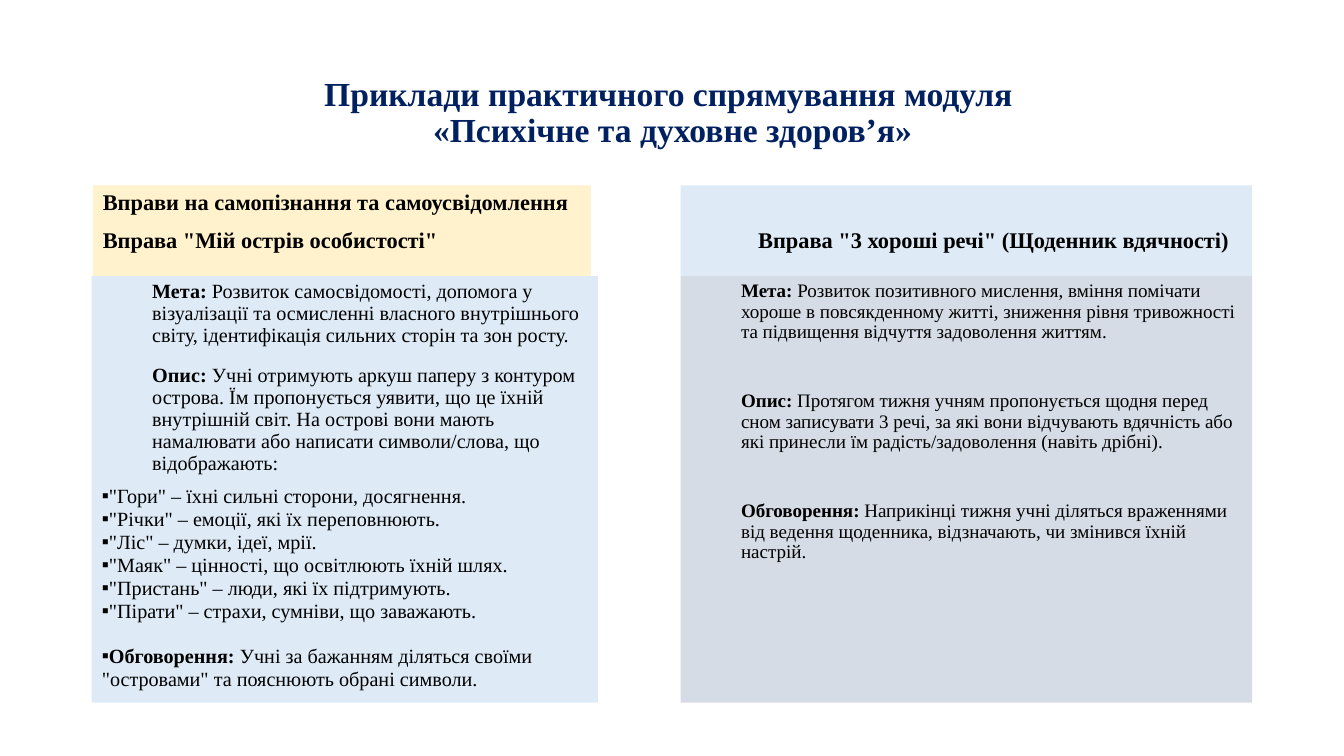
from lxml.etree import SubElement
from pptx import Presentation
from pptx.dml.color import RGBColor
from pptx.enum.text import MSO_ANCHOR, MSO_AUTO_SIZE, PP_ALIGN
from pptx.oxml.ns import qn
from pptx.util import Emu, Pt

EMU_PER_PX = 9144  # 100 px to the inch
FONT = "Times New Roman"
NAVY = RGBColor(0x00, 0x20, 0x60)
BLACK = RGBColor(0x00, 0x00, 0x00)
CREAM = RGBColor(0xFF, 0xF2, 0xCC)
PALE_BLUE = RGBColor(0xDE, 0xEB, 0xF7)
GREY_BLUE = RGBColor(0xD6, 0xDC, 0xE5)

HEAD_TOP, HEAD_HEIGHT = 184, 90
BODY_TOP, BODY_HEIGHT = 274, 423
RIGHT_LEFT, RIGHT_WIDTH = 675, 567

ISLAND_GOALS = [
    ("Мета:", " Розвиток самосвідомості, допомога у візуалізації та осмисленні власного "
     "внутрішнього світу, ідентифікація сильних сторін та зон росту."),
    ("Опис:", " Учні отримують аркуш паперу з контуром острова. Їм пропонується уявити, що це "
     "їхній внутрішній світ. На острові вони мають намалювати або написати символи/слова, "
     "що відображають:"),
]
ISLAND_SYMBOLS = [
    "\"Гори\" – їхні сильні сторони, досягнення.",
    "\"Річки\" – емоції, які їх переповнюють.",
    "\"Ліс\" – думки, ідеї, мрії.",
    "\"Маяк\" – цінності, що освітлюють їхній шлях.",
    "\"Пристань\" – люди, які їх підтримують.",
    "\"Пірати\" – страхи, сумніви, що заважають.",
]
ISLAND_TALK = ("Обговорення:", " Учні за бажанням діляться своїми \"островами\" та пояснюють "
               "обрані символи.")
GRATITUDE = [
    ("Мета:", " Розвиток позитивного мислення, вміння помічати хороше в повсякденному житті, "
     "зниження рівня тривожності та підвищення відчуття задоволення життям."),
    ("Опис:", " Протягом тижня учням пропонується щодня перед сном записувати 3 речі, за які "
     "вони відчувають вдячність або які принесли їм радість/задоволення (навіть дрібні)."),
    ("Обговорення:", " Наприкінці тижня учні діляться враженнями від ведення щоденника, "
     "відзначають, чи змінився їхній настрій."),
]


def px(length):
    return Emu(length * EMU_PER_PX)


class ModulePage:
    def __init__(self, deck):
        self.page = deck.slides.add_slide(deck.slide_layouts.get_by_name("Comparison"))
        (self.title_holder, self.left_head, self.left_body,
         self.right_head, self.right_body) = self.page.placeholders

    def place(self, box, left, top, width, height, anchor, fill=None):
        """Move a placeholder, fill it and return its text frame."""
        box.left, box.top, box.width, box.height = map(px, (left, top, width, height))
        if fill is not None:
            box.fill.solid()
            box.fill.fore_color.rgb = fill
        frame = box.text_frame
        frame.auto_size = MSO_AUTO_SIZE.NONE
        frame.word_wrap = True
        frame.vertical_anchor = anchor
        return frame

    def para(self, frame, spans, size, line=0.9, before=0, level=0, margin=0,
             indent=0, bullet=None, color=BLACK, bold=None):
        """Append a paragraph; a pair of spans is a bold label and plain text."""
        first = frame.paragraphs[0]
        para = first if not first.runs else frame.add_paragraph()
        para.level = level
        para.line_spacing = line
        para.space_before, para.space_after = Pt(before), Pt(0)
        properties = para._p.get_or_add_pPr()
        properties.set("marL", str(px(margin)))
        properties.set("indent", str(px(indent)))
        if bullet:
            SubElement(properties, qn("a:buFont"), typeface=FONT)
            SubElement(properties, qn("a:buChar"), char=bullet)
        else:
            SubElement(properties, qn("a:buNone"))
        para.font.name, para.font.size = FONT, Pt(size)
        para.font.color.rgb = color
        para.font.bold = bold
        if isinstance(spans, str):
            para.text = spans
        else:
            for text, strong in zip(spans, (True, False)):
                span = para.add_run()
                span.text = text
                span.font.bold = strong
        return para

    def title(self, text):
        frame = self.place(self.title_holder, 92, 40, 1150, 145, MSO_ANCHOR.MIDDLE)
        para = self.para(frame, text, 24, color=NAVY, bold=True)
        para.alignment = PP_ALIGN.CENTER

    def heading(self, box, left, width, fill, lines, margin=0):
        frame = self.place(box, left, HEAD_TOP, width, HEAD_HEIGHT, MSO_ANCHOR.BOTTOM, fill)
        frame.margin_bottom = px(23)
        for index, text in enumerate(lines):
            self.para(frame, text, 16, line=0.87, before=10 if index else 0,
                      margin=margin, bold=True)

    def body(self, box, left, width, fill, items, size, line, gap):
        """Fill a column with labelled paragraphs and return its text frame."""
        frame = self.place(box, left, BODY_TOP, width, BODY_HEIGHT, MSO_ANCHOR.TOP, fill)
        for index, spans in enumerate(items):
            self.para(frame, spans, size, line, before=gap if index else 0,
                      level=1, margin=50)
        return frame

    def bullet(self, frame, spans, before=0):
        self.para(frame, spans, 14.4, 0.95, before, level=2, indent=-25, bullet="▪")


def main():
    deck = Presentation()
    deck.slide_width, deck.slide_height = px(1333), px(750)
    page = ModulePage(deck)
    page.title("Приклади практичного спрямування модуля \v«Психічне та духовне здоров’я»")

    page.heading(page.left_head, 92, 494, CREAM,
                 ["Вправи на самопізнання та самоусвідомлення",
                  "Вправа \"Мій острів особистості\""])
    island = page.body(page.left_body, 91, 502, PALE_BLUE, ISLAND_GOALS, 14.4, 0.91, 12.5)
    for index, symbol in enumerate(ISLAND_SYMBOLS):
        page.bullet(island, symbol, before=0 if index else 7)
    page.bullet(island, ISLAND_TALK, before=16)

    page.heading(page.right_head, RIGHT_LEFT, RIGHT_WIDTH, PALE_BLUE,
                 ["Вправа \"3 хороші речі\" (Щоденник вдячності)"], margin=67)
    page.body(page.right_body, RIGHT_LEFT, RIGHT_WIDTH, GREY_BLUE, GRATITUDE, 13.6, 0.9, 34.5)
    deck.save("out.pptx")


if __name__ == "__main__":
    main()
